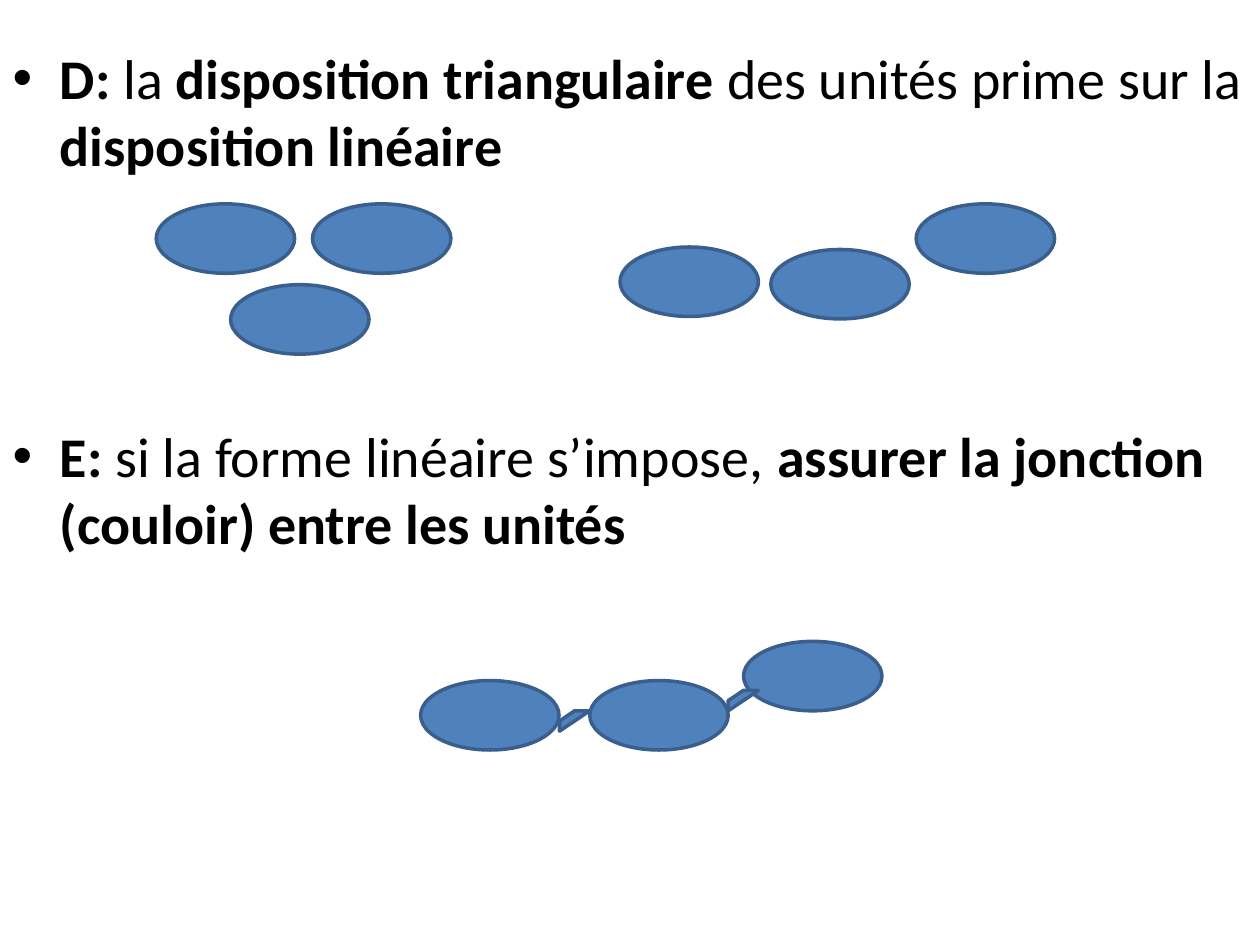
from pptx import Presentation
from pptx import util as u
from pptx.dml.color import RGBColor
from pptx.enum import shapes, text

# Content: each rule is a list of (words, bold)
RULES = [
    [("D: ", True), ("la ", False), ("disposition triangulaire ", True),
     ("des unités prime sur la ", False), ("disposition linéaire", True)],
    [("E: ", True), ("si la forme linéaire s’impose, ", False),
     ("assurer la jonction (couloir) entre les unités", True)],
]

# Left and top of each part, in cm
TRIANGLE = [(3.15, 4.11), (6.3, 4.11), (4.65, 5.74)]
LINE = [(18.47, 4.11), (15.54, 5.03), (12.5, 4.98)]
JOINED_LINE = [(8.48, 13.72), (14.99, 12.93), (11.89, 13.72)]
CORRIDORS = [(11.28, 14.33), (14.68, 13.92)]

UNIT_SIZE = (2.79, 1.4)
CORRIDOR_SIZE = (0.61, 0.41)
BODY_FRAME = (0, 0.74, 25.4, 17.6)

THEME = {
    "font": "Calibri",
    "size": u.Pt(32),
    "ink": RGBColor(0x00, 0x00, 0x00),
    "fill": RGBColor(0x4F, 0x81, 0xBD),
    "line": RGBColor(0x3A, 0x5F, 0x8C),
    "line_width": u.Pt(2),
    "figure_gap": u.Pt(139.6),  # room for the figure between the two rules
}


def add_span(para, words, bold=False, size=THEME["size"], color=THEME["ink"]):
    span = para.add_run()
    span.text = words
    span.font.name = THEME["font"]
    span.font.size = size
    span.font.bold = bold
    span.font.color.rgb = color


def add_parts(page, kind, places, size):
    for place in places:
        part = page.shapes.add_shape(kind, *map(u.Cm, place + size))
        part.shadow.inherit = False
        part.fill.solid()
        part.fill.fore_color.rgb = THEME["fill"]
        part.line.color.rgb = THEME["line"]
        part.line.width = THEME["line_width"]


def main():
    deck = Presentation()
    deck.slide_width, deck.slide_height = u.Cm(25.4), u.Cm(19.05)
    page = deck.slides.add_slide(deck.slide_layouts[1])
    title = page.shapes.title.element
    title.getparent().remove(title)

    # Rules, in the bulleted body placeholder
    body = page.placeholders[1]
    body.left, body.top, body.width, body.height = map(u.Cm, BODY_FRAME)
    frame = body.text_frame
    frame.auto_size = text.MSO_AUTO_SIZE.NONE
    for index, rule in enumerate(RULES):
        para = frame.add_paragraph() if index else frame.paragraphs[0]
        if index:
            para.space_before = THEME["figure_gap"]
        for words, bold in rule:
            add_span(para, words, bold=bold)

    # Units, then the corridors that join them
    for group in (TRIANGLE, LINE, JOINED_LINE):
        add_parts(page, shapes.MSO_SHAPE.OVAL, group, UNIT_SIZE)
    add_parts(page, shapes.MSO_SHAPE.DIAGONAL_STRIPE, CORRIDORS, CORRIDOR_SIZE)

    deck.save("out.pptx")


if __name__ == "__main__":
    main()
